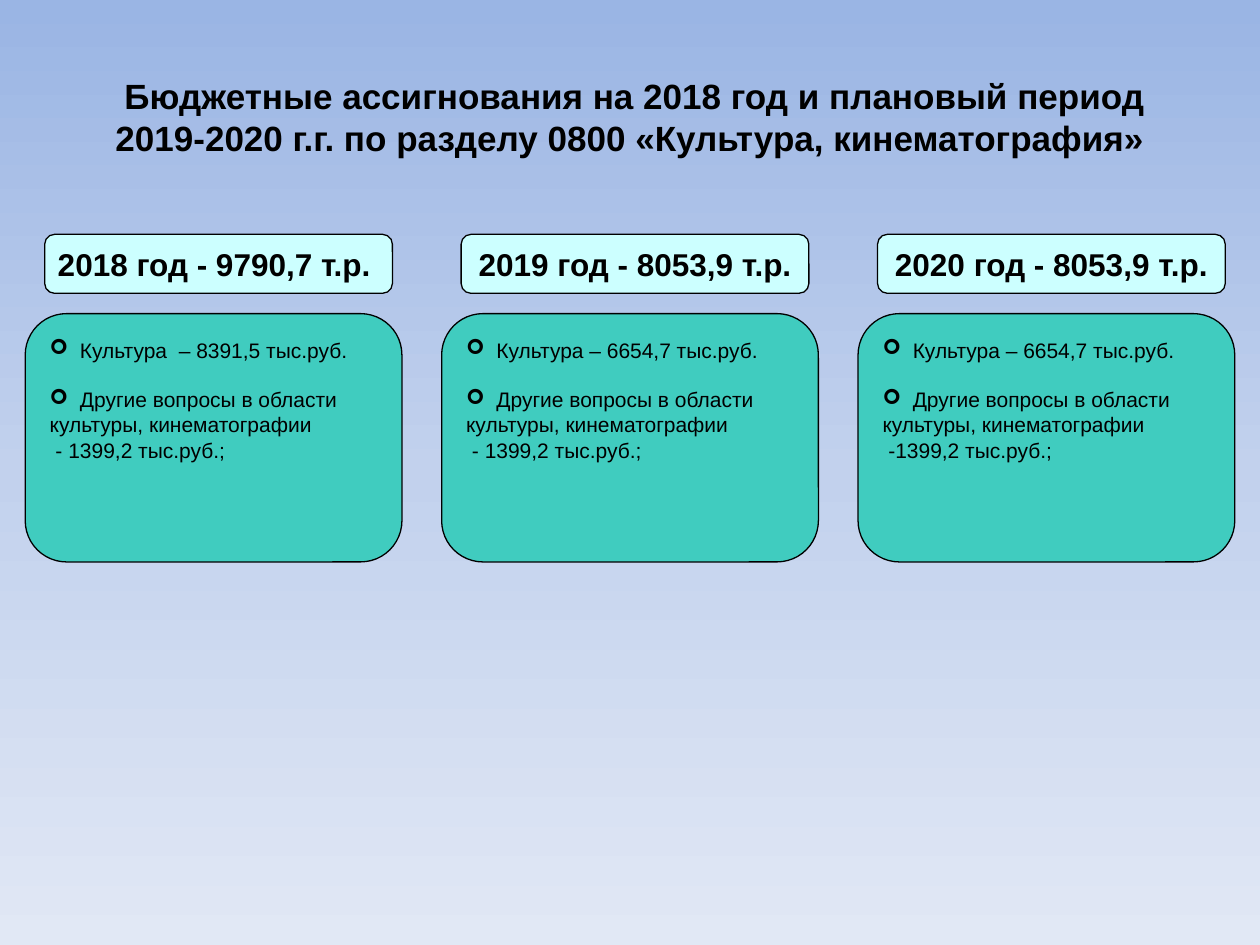
from copy import deepcopy

from lxml import etree
from pptx import Presentation
from pptx.dml.color import RGBColor
from pptx.enum.shapes import MSO_SHAPE
from pptx.enum.text import MSO_ANCHOR, PP_ALIGN
from pptx.oxml.ns import qn
from pptx.util import Inches, Pt

ROUNDED = MSO_SHAPE.ROUNDED_RECTANGLE
MIDDLE, TOP = MSO_ANCHOR.MIDDLE, MSO_ANCHOR.TOP
CENTER, LEFT = PP_ALIGN.CENTER, PP_ALIGN.LEFT
FONT = "Arial"
COLORS = {
    "sky_top": "9AB5E4",
    "sky_middle": "C2D1ED",
    "sky_bottom": "E1E8F5",
    "header": "CCFFFF",
    "card": "40CCBF",
    "ink": "000000",
}
TITLE = (" Бюджетные ассигнования на 2018 год и плановый период "
         "2019-2020 г.г. по разделу 0800 «Культура, кинематография»")
YEARS = [
    ("2018 год - 9790,7 т.р. ", "Культура  – 8391,5 тыс.руб.", " - 1399,2 тыс.руб.;"),
    ("2019 год - 8053,9 т.р.", "Культура – 6654,7 тыс.руб.", " - 1399,2 тыс.руб.;"),
    ("2020 год - 8053,9 т.р.", "Культура – 6654,7 тыс.руб.", " -1399,2 тыс.руб.;"),
]
MARGIN, COLUMN_WIDTH, COLUMN_PITCH = 0.2, 2.99, 3.305
COLUMN_TOP, COLUMN_HEIGHT = 1.86, 2.6


def color(name):
    return RGBColor.from_string(COLORS[name])


def place(shape, left, top, width, height):
    shape.left, shape.top = Inches(left), Inches(top)
    shape.width, shape.height = Inches(width), Inches(height)


def add_text(paragraph, text, size, bold=False, alignment=LEFT):
    paragraph.alignment = alignment
    run = paragraph.add_run()
    run.text = text
    run.font.name = FONT
    run.font.size = Pt(size)
    run.font.bold = bold
    run.font.color.rgb = color("ink")


def add_bullet(paragraph):
    properties = paragraph._p.get_or_add_pPr()
    properties.set("marL", str(Inches(0.24)))
    properties.set("indent", str(-Inches(0.24)))
    etree.SubElement(properties, qn("a:buFont"), typeface="Wingdings")
    etree.SubElement(properties, qn("a:buChar"), char="➢")


def add_panel(slide, box, fill):
    shape = slide.shapes.add_shape(ROUNDED, *(Inches(length) for length in box))
    shape.shadow.inherit = False
    shape.fill.solid()
    shape.fill.fore_color.rgb = color(fill)
    shape.line.color.rgb = color("ink")
    shape.line.width = Pt(0.75)
    return shape


def paint_background(slide):
    fill = slide.background.fill
    fill.gradient()
    fill.gradient_angle = 270
    stop_list = slide.element.find(".//" + qn("a:gsLst"))
    stop_list.insert(1, deepcopy(stop_list[0]))
    names = ("sky_top", "sky_middle", "sky_bottom")
    for stop, name, position in zip(fill.gradient_stops, names, (0, 0.5, 1)):
        stop.color.rgb = color(name)
        stop.position = position


def fill_title(slide, left, top, width, height):
    title = slide.shapes.title
    place(title, left, top, width, height)
    title.text_frame.word_wrap = True
    title.text_frame.vertical_anchor = MIDDLE
    add_text(title.text_frame.paragraphs[0], TITLE, 20, True, CENTER)


def add_header(slide, box, text):
    frame = add_panel(slide, box, "header").text_frame
    frame.word_wrap = False
    frame.vertical_anchor = MIDDLE
    add_text(frame.paragraphs[0], text, 18, True, CENTER)


def add_card(slide, box, culture, other):
    frame = add_panel(slide, box, "card").text_frame
    frame.word_wrap = True
    frame.vertical_anchor = TOP
    frame.margin_top = Inches(0.09)
    lines = [culture, "Другие вопросы в области", "культуры, кинематографии", other]
    for index, line in enumerate(lines):
        paragraph = frame.add_paragraph() if index else frame.paragraphs[0]
        add_text(paragraph, line, 12)
        if index == 1:
            paragraph.space_before = Pt(14)
        if index < 2:
            add_bullet(paragraph)


def add_year(slide, left, top, width, height, year):
    header, culture, other = year
    header_width, header_height = width * 0.923, height * 0.18
    header_left = left + (width - header_width) / 2 + 0.04
    card_height = height * 0.758
    add_header(slide, (header_left, top, header_width, header_height), header)
    add_card(slide, (left, top + height - card_height, width, card_height), culture, other)


def main():
    presentation = Presentation()
    presentation.slide_width, presentation.slide_height = Inches(10), Inches(7.5)
    slide = presentation.slides.add_slide(presentation.slide_layouts[5])
    paint_background(slide)
    fill_title(slide, 0.5, 0.3, 9, 1.25)
    for column, year in enumerate(YEARS):
        left = MARGIN + column * COLUMN_PITCH
        add_year(slide, left, COLUMN_TOP, COLUMN_WIDTH, COLUMN_HEIGHT, year)
    presentation.save("out.pptx")


if __name__ == "__main__":
    main()
